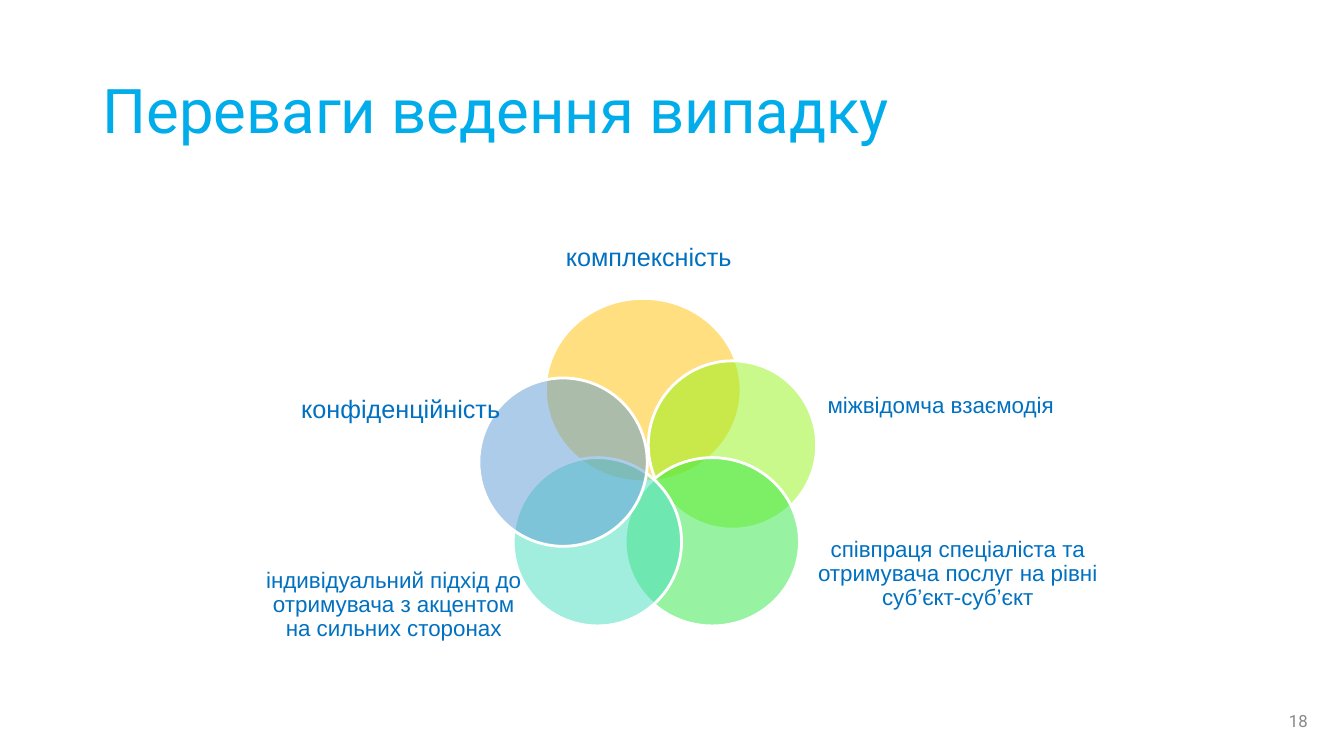
from lxml import etree
from pptx import Presentation
from pptx.dml.color import RGBColor
from pptx.enum.shapes import MSO_SHAPE
from pptx.enum.text import MSO_ANCHOR, PP_ALIGN
from pptx.oxml.ns import qn
from pptx.util import Pt

PX = 9144  # EMU per px, 100 px to the inch

OVAL = MSO_SHAPE.OVAL
MIDDLE = MSO_ANCHOR.MIDDLE
LEFT, CENTER, RIGHT = PP_ALIGN.LEFT, PP_ALIGN.CENTER, PP_ALIGN.RIGHT

WHITE = RGBColor(0xFF, 0xFF, 0xFF)
TITLE_BLUE = RGBColor(0x00, 0xAC, 0xE9)
LABEL_BLUE = RGBColor(0x00, 0x70, 0xC0)
GREY = RGBColor(0x88, 0x88, 0x88)
AMBER = RGBColor(0xFF, 0xC0, 0x00)
LIME = RGBColor(0x94, 0xF3, 0x19)
GREEN = RGBColor(0x30, 0xE8, 0x45)
TEAL = RGBColor(0x46, 0xDE, 0xBF)
BLUE = RGBColor(0x5B, 0x9B, 0xD5)

# circle box, colour, label box, label size, label
ADVANTAGES = [
    ((541, 296, 194, 182), AMBER, (547, 200, 193, 112), 18, "комплексність"),
    ((643, 358, 167, 167), LIME, (779, 343, 308, 121), 16,
     "міжвідомча взаємодія"),
    ((620, 454, 173, 167), GREEN, (792, 509, 316, 121), 16,
     "співпраця спеціаліста та отримувача послуг на рівні суб’єкт-суб’єкт"),
    ((509, 454, 167, 167), TEAL, (258, 540, 265, 121), 16,
     "індивідуальний підхід до отримувача з акцентом на сильних сторонах"),
    ((475, 375, 167, 167), BLUE, (290, 347, 215, 121), 18, "конфіденційність"),
]


def emu(box):
    return [v * PX for v in box]


def add_text(slide, box, text, font, size, color, align, spacing=0.9,
             margins=(10, 5)):
    """Add a vertically centred text box; margins are (horizontal, vertical)."""
    tf = slide.shapes.add_textbox(*emu(box)).text_frame
    tf.word_wrap = True
    tf.vertical_anchor = MIDDLE
    tf.margin_left = tf.margin_right = margins[0] * PX
    tf.margin_top = tf.margin_bottom = margins[1] * PX
    tf.text = text
    p = tf.paragraphs[0]
    p.alignment = align
    p.line_spacing = spacing
    r = p.runs[0]
    r.font.name = font
    r.font.size = Pt(size)
    r.font.color.rgb = color


def add_circle(slide, box, color):
    """Add a half-transparent Venn circle with a white outline."""
    sp = slide.shapes.add_shape(OVAL, *emu(box))
    sp.shadow.inherit = False
    sp.fill.solid()
    sp.fill.fore_color.rgb = color
    clr = sp.fill._xPr.find(qn("a:solidFill")).find(qn("a:srgbClr"))
    etree.SubElement(clr, qn("a:alpha")).set("val", "50000")
    sp.line.color.rgb = WHITE
    sp.line.width = Pt(2)


def main():
    prs = Presentation()
    prs.slide_width, prs.slide_height = 1333 * PX, 750 * PX
    slide = prs.slides.add_slide(prs.slide_layouts[6])

    add_text(slide, (92, 40, 1150, 145), "Переваги ведення випадку",
             "Roboto", 44, TITLE_BLUE, LEFT)
    for circle, color, label_box, size, label in ADVANTAGES:
        add_circle(slide, circle, color)
        add_text(slide, label_box, label, "Arial", size, LABEL_BLUE, CENTER,
                 margins=(0, 0))
    add_text(slide, (1007, 695, 300, 40), "18", "Roboto", 12, GREY, RIGHT,
             spacing=1.0)

    prs.save("out.pptx")


if __name__ == "__main__":
    main()
